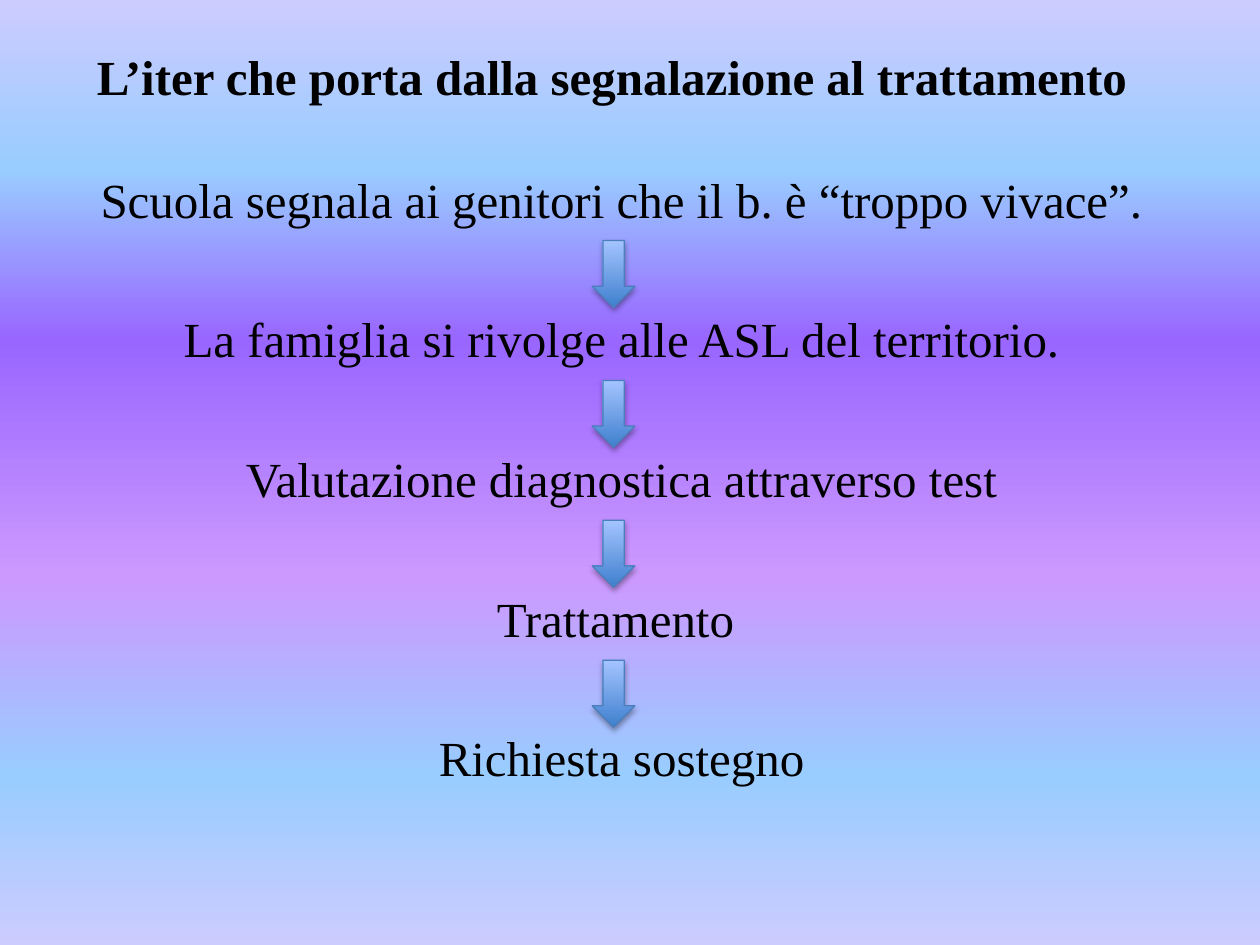
from copy import deepcopy

from lxml import etree
from pptx import Presentation
from pptx import util as u
from pptx.dml.color import RGBColor
from pptx.enum import shapes, text
from pptx.oxml import ns

BLACK = RGBColor(0x00, 0x00, 0x00)
LILAC = RGBColor(0xCC, 0xCC, 0xFF)
SKY = RGBColor(0x99, 0xCC, 0xFF)
VIOLET = RGBColor(0x99, 0x66, 0xFF)
ORCHID = RGBColor(0xCC, 0x99, 0xFF)
ARROW_DARK = RGBColor(0x3F, 0x80, 0xCE)
ARROW_LIGHT = RGBColor(0xA4, 0xC4, 0xFF)
ARROW_EDGE = RGBColor(0x4B, 0x7E, 0xBC)

BACKGROUND = [(0, LILAC), (0.18, SKY), (0.36, VIOLET),
              (0.61, ORCHID), (0.82, SKY), (1, LILAC)]
ARROW_FILL = [(0, ARROW_DARK), (1, ARROW_LIGHT)]
TITLE = "L’iter che porta dalla segnalazione al trattamento"
STEPS = [
    "Scuola segnala ai genitori che il b. è “troppo vivace”.",
    "La famiglia si rivolge alle ASL del territorio.",
    "Valutazione diagnostica attraverso test",
    "Trattamento ",
    "Richiesta sostegno",
]
ARROW_TOP, ARROW_PITCH = 4.85, 2.82


class Deck:
    font = "Times New Roman"
    size = u.Pt(28)

    def __init__(self, prs):
        self.s = prs.slides.add_slide(prs.slide_layouts[0])

    def gradient(self, fill, owner, stops, angle):
        """Give fill, found inside the XML element owner, any number of stops."""
        fill.gradient()
        fill.gradient_angle = angle
        gs_list = next(owner.iter(ns.qn("a:gsLst")))
        for _ in stops[2:]:
            gs_list.append(deepcopy(gs_list[0]))
        for stop, (position, color) in zip(fill.gradient_stops, stops):
            stop.position = position
            stop.color.rgb = color

    def background(self, stops):
        self.gradient(self.s.background.fill, self.s.element, stops, 270)

    def placeholder(self, index, box, lines, anchor, bold=False, gap=None):
        sp = self.s.placeholders[index]
        sp.left, sp.top, sp.width, sp.height = map(u.Cm, box)
        tf = sp.text_frame
        tf.text = "\n".join(lines)
        tf.auto_size = text.MSO_AUTO_SIZE.NONE
        tf.vertical_anchor = anchor
        for i, p in enumerate(tf.paragraphs):
            p.alignment = text.PP_ALIGN.CENTER
            if i and gap:
                p.space_before = gap
            for r in p.runs:
                r.font.name, r.font.size = self.font, self.size
                r.font.bold = bold
                r.font.color.rgb = BLACK

    def down_arrow(self, left, top, width, height):
        sp = self.s.shapes.add_shape(shapes.MSO_SHAPE.DOWN_ARROW,
                                     *map(u.Cm, (left, top, width, height)))
        self.gradient(sp.fill, sp.element, ARROW_FILL, 90)
        sp.line.color.rgb = ARROW_EDGE
        sp.line.width = u.Pt(0.75)
        self.soft_shadow(sp)

    def soft_shadow(self, sp):
        sp.shadow.inherit = False
        effects = next(sp.element.iter(ns.qn("a:effectLst")))
        shadow = etree.SubElement(effects, ns.qn("a:outerShdw"), blurRad="40000",
                                  dist="23000", dir="5400000", rotWithShape="0")
        color = etree.SubElement(shadow, ns.qn("a:srgbClr"), val=str(BLACK))
        etree.SubElement(color, ns.qn("a:alpha"), val="35000")


def main():
    prs = Presentation()
    prs.slide_width, prs.slide_height = u.Cm(25.4), u.Cm(19.05)
    deck = Deck(prs)
    deck.background(BACKGROUND)
    deck.placeholder(0, (1.17, 0.74, 22.33, 1.57), [TITLE],
                     text.MSO_ANCHOR.MIDDLE, bold=True)
    deck.placeholder(1, (1.57, 3.28, 21.92, 14.02), STEPS,
                     text.MSO_ANCHOR.TOP, gap=u.Pt(46.2))
    for i in range(len(STEPS) - 1):
        deck.down_arrow(11.94, ARROW_TOP + i * ARROW_PITCH, 0.86, 1.35)
    prs.save("out.pptx")


if __name__ == "__main__":
    main()
